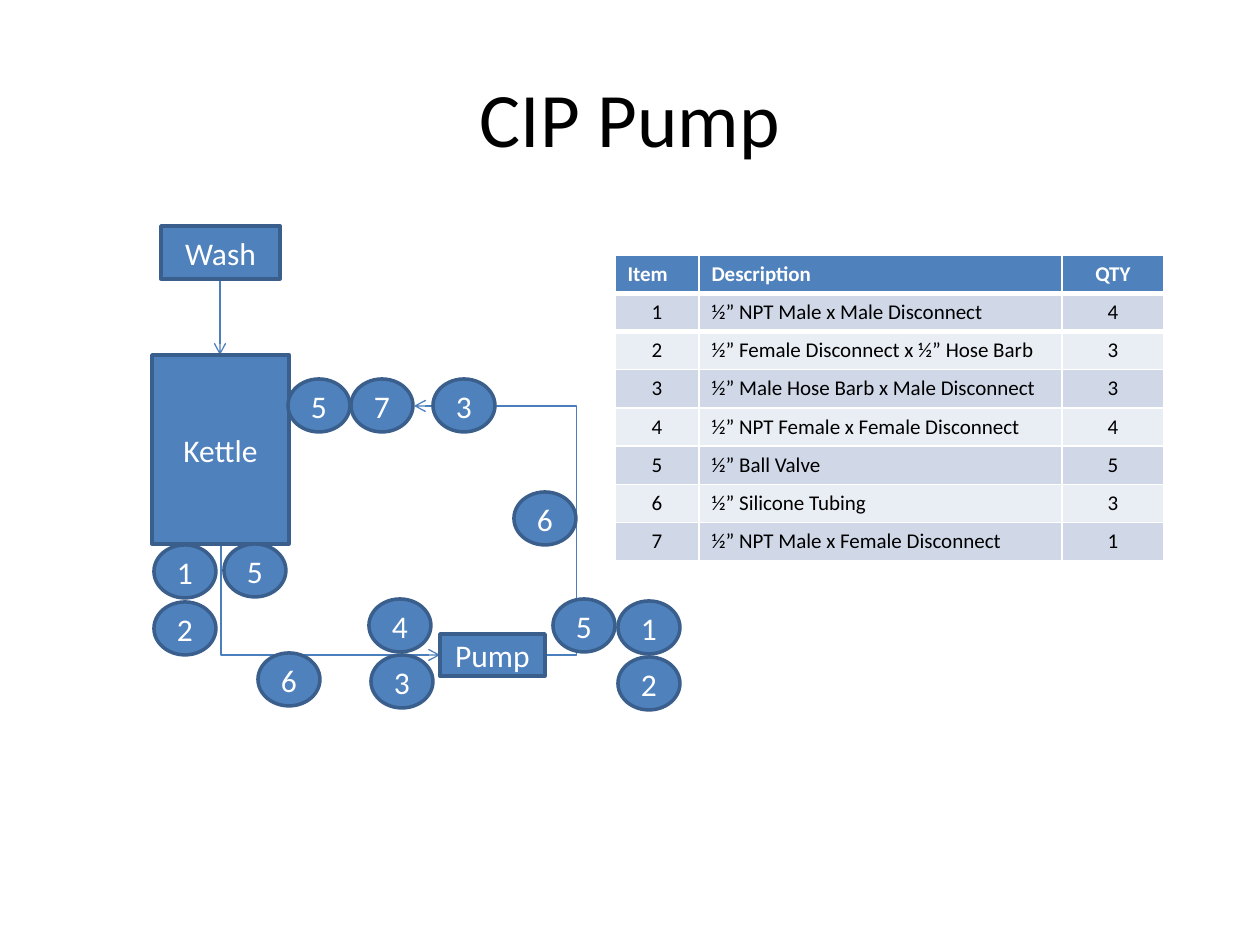
"""Build the CIP Pump slide: a piping diagram beside its parts table."""
import pptx
import pptx.dml.color
import pptx.enum.shapes
import pptx.enum.text
import pptx.oxml.ns
import pptx.util
import lxml.etree

PX = 7257
FONT = "Calibri"
COLORS = {
    "fill": "4F81BD",
    "outline": "3A5F8C",
    "pipe": "4B7EBC",
    "odd_row": "D0D8E8",
    "even_row": "E9EDF4",
    "white": "FFFFFF",
    "black": "000000",
}
ALIGN = pptx.enum.text.PP_ALIGN
SHAPE = pptx.enum.shapes.MSO_SHAPE
CONNECTOR = pptx.enum.shapes.MSO_CONNECTOR
qn = pptx.oxml.ns.qn


def rgb(name):
    return pptx.dml.color.RGBColor.from_string(COLORS[name])


def write_text(frame, text, size=18, color="white", bold=False, align=ALIGN.CENTER):
    paragraph = frame.paragraphs[0]
    paragraph.alignment = align
    run = paragraph.add_run()
    run.text = text
    run.font.name = FONT
    run.font.size = pptx.util.Pt(size)
    run.font.bold = bold
    run.font.color.rgb = rgb(color)


presentation = pptx.Presentation()
presentation.slide_width = pptx.util.Inches(10)
presentation.slide_height = pptx.util.Inches(7.5)
slide = presentation.slides.add_slide(presentation.slide_layouts[5])

title = slide.shapes.title
title.left, title.top, title.width, title.height = 63 * PX, 38 * PX, 1134 * PX, 157 * PX
title.text_frame.vertical_anchor = pptx.enum.text.MSO_ANCHOR.MIDDLE
write_text(title.text_frame, "CIP Pump", size=44, color="black")

boxes = [
    ("Kettle", 152, 355, 137, 189),
    ("Pump", 440, 634, 105, 42),
    ("Wash", 161, 226, 119, 53),
]
fittings = [
    ("1", 154, 545), ("2", 154, 602), ("2", 618, 657), ("3", 371, 655),
    ("4", 369, 599), ("1", 618, 601), ("5", 553, 599), ("5", 224, 544),
    ("3", 433, 379), ("6", 258, 653), ("6", 514, 492), ("7", 351, 379),
    ("5", 288, 379),
]

supply_pipe = slide.shapes.add_connector(CONNECTOR.STRAIGHT, 220 * PX, 279 * PX, 220 * PX, 355 * PX)

drain_pipe = slide.shapes.add_connector(CONNECTOR.ELBOW, 275 * PX, 490 * PX, 386 * PX, 709 * PX)
drain_properties = drain_pipe._element.spPr
drain_properties.find(qn("a:prstGeom")).set("prst", "bentConnector2")
drain_properties.find(qn("a:xfrm")).set("rot", "16200000")
drain_properties.find(qn("a:xfrm")).set("flipH", "1")

return_pipe = slide.shapes.add_connector(CONNECTOR.ELBOW, 545 * PX, 655 * PX, 414 * PX, 406 * PX)
return_geometry = return_pipe._element.spPr.find(qn("a:prstGeom"))
adjustments = return_geometry.find(qn("a:avLst"))
if adjustments is None:
    adjustments = lxml.etree.SubElement(return_geometry, qn("a:avLst"))
lxml.etree.SubElement(adjustments, qn("a:gd"), name="adj1", fmla="val -24000")

for pipe in (supply_pipe, drain_pipe, return_pipe):
    pipe.line.color.rgb = rgb("pipe")
    pipe.line.width = pptx.util.Pt(0.75)
    line_properties = pipe._element.spPr.find(qn("a:ln"))
    lxml.etree.SubElement(line_properties, qn("a:tailEnd"), type="arrow")
    lxml.etree.SubElement(pipe._element.spPr, qn("a:effectLst"))

parts = [(SHAPE.RECTANGLE, *box) for box in boxes]
parts += [(SHAPE.OVAL, *fitting, 62, 53) for fitting in fittings]
for kind, label, left, top, width, height in parts:
    shape = slide.shapes.add_shape(kind, left * PX, top * PX, width * PX, height * PX)
    shape.shadow.inherit = False
    shape.fill.solid()
    shape.fill.fore_color.rgb = rgb("fill")
    shape.line.color.rgb = rgb("outline")
    shape.line.width = pptx.util.Pt(2)
    shape.text_frame.vertical_anchor = pptx.enum.text.MSO_ANCHOR.MIDDLE
    write_text(shape.text_frame, label)

rows = [
    ("Item", "Description", "QTY"),
    ("1", "½” NPT Male x Male Disconnect", "4"),
    ("2", "½” Female Disconnect x ½” Hose Barb", "3"),
    ("3", "½” Male Hose Barb x Male Disconnect", "3"),
    ("4", "½” NPT Female x Female Disconnect", "4"),
    ("5", "½” Ball Valve", "5"),
    ("6", "½” Silicone Tubing", "3"),
    ("7", "½” NPT Male x Female Disconnect", "1"),
]
column_widths = [84, 363, 102]
table = slide.shapes.add_table(
    len(rows), len(column_widths), 615 * PX, 255 * PX, sum(column_widths) * PX, 304 * PX
).table
for column, width in zip(table.columns, column_widths):
    column.width = width * PX
for row_index, row in enumerate(rows):
    header = row_index == 0
    fill = "fill" if header else "odd_row" if row_index % 2 else "even_row"
    for column_index, text in enumerate(row):
        cell = table.cell(row_index, column_index)
        cell.fill.solid()
        cell.fill.fore_color.rgb = rgb(fill)
        if row_index < 2:
            border = lxml.etree.Element(qn("a:lnB" if header else "a:lnT"), w=str(pptx.util.Pt(3)))
            border_fill = lxml.etree.SubElement(border, qn("a:solidFill"))
            lxml.etree.SubElement(border_fill, qn("a:srgbClr"), val=COLORS["white"])
            cell._tc.get_or_add_tcPr().insert(0, border)
        left_aligned = column_index == 1 or (header and column_index == 0)
        write_text(
            cell.text_frame, text, size=12, bold=header,
            color="white" if header else "black",
            align=ALIGN.LEFT if left_aligned else ALIGN.CENTER,
        )

presentation.save("out.pptx")
